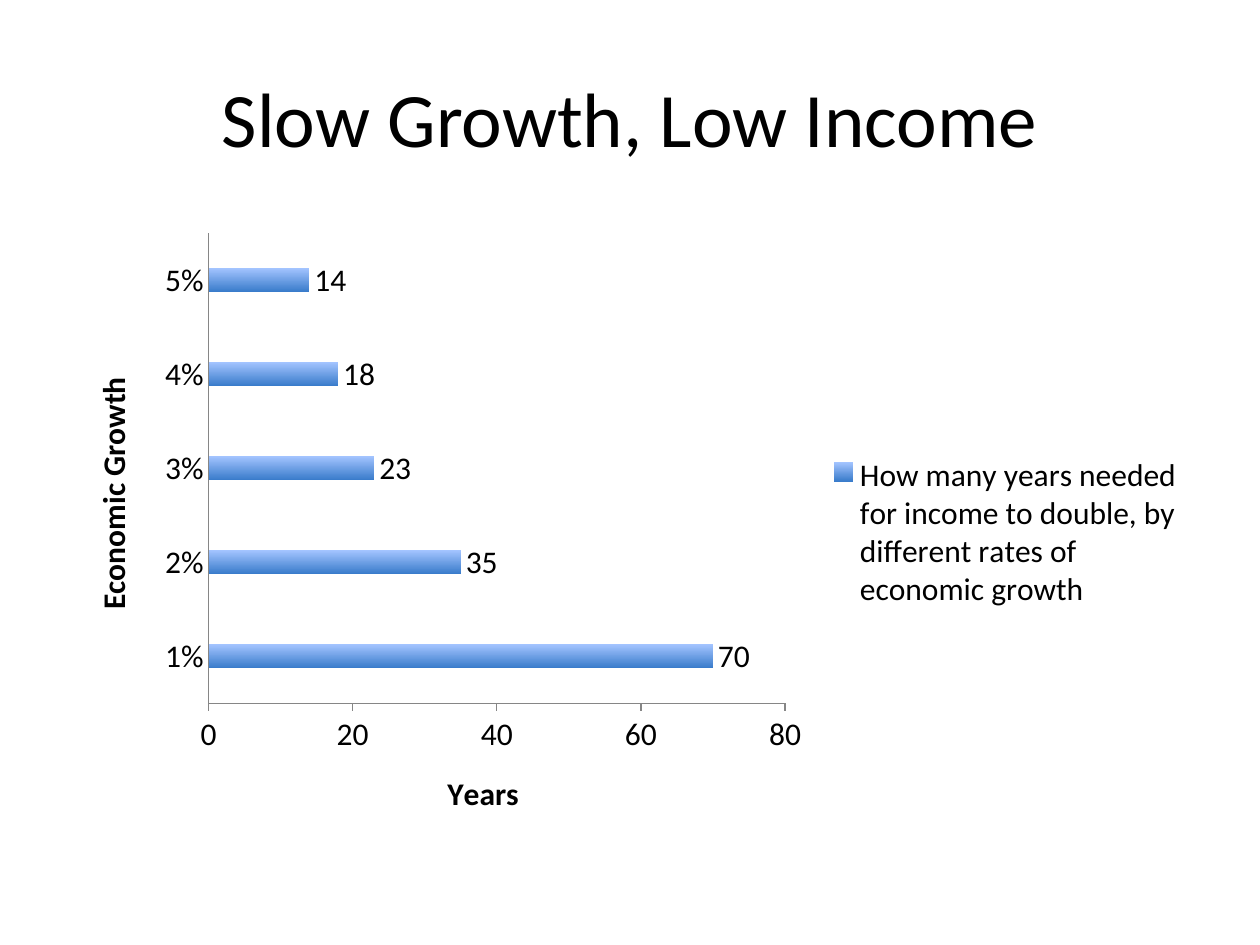
from dataclasses import dataclass

from pptx import Presentation
from pptx.chart.data import CategoryChartData
from pptx.dml.color import RGBColor
from pptx.enum.chart import XL_CHART_TYPE, XL_LABEL_POSITION, XL_LEGEND_POSITION, XL_TICK_MARK
from pptx.enum.text import MSO_ANCHOR, PP_ALIGN
from pptx.util import Inches, Pt


@dataclass(frozen=True)
class Theme:
    """Colours and type sizes of the slide."""

    font: str = "Calibri"
    text: RGBColor = RGBColor(0x00, 0x00, 0x00)
    axis: RGBColor = RGBColor(0x86, 0x86, 0x86)
    bar_top: RGBColor = RGBColor(0xA3, 0xC4, 0xFF)
    bar_bottom: RGBColor = RGBColor(0x3A, 0x7C, 0xCB)
    title_size: Pt = Pt(44)
    chart_size: Pt = Pt(18)


THEME = Theme()
WIDTH, HEIGHT = Inches(10), Inches(7.5)
MARGIN = 0.05
YEARS_TO_DOUBLE = {0.01: 70, 0.02: 35, 0.03: 23, 0.04: 18, 0.05: 14}
MEASURE = "How many years needed for income to double, by different rates of economic growth"


def band(top, height):
    """Return the box between the side margins, from shares of the slide height."""
    return (
        int(WIDTH * MARGIN),
        int(HEIGHT * top),
        int(WIDTH * (1 - 2 * MARGIN)),
        int(HEIGHT * height),
    )


def style_font(font, size, bold=False):
    """Apply the theme's typeface and text colour."""
    font.name, font.size, font.bold = THEME.font, size, bold
    font.color.rgb = THEME.text


def set_title(slide, text, box):
    """Place and format the slide title."""
    title = slide.shapes.title
    title.left, title.top, title.width, title.height = box
    title.text_frame.text = text
    title.text_frame.vertical_anchor = MSO_ANCHOR.MIDDLE
    heading = title.text_frame.paragraphs[0]
    heading.alignment = PP_ALIGN.CENTER
    style_font(heading.runs[0].font, THEME.title_size)


def style_axis(axis, caption, tick_mark, number_format):
    """Title an axis and format its line, ticks and labels."""
    axis.has_major_gridlines = False
    axis.major_tick_mark = tick_mark
    axis.minor_tick_mark = XL_TICK_MARK.NONE
    axis.format.line.color.rgb = THEME.axis
    axis.format.line.width = Pt(0.75)
    axis.tick_labels.number_format = number_format
    axis.tick_labels.number_format_is_linked = False
    axis.axis_title.text_frame.text = caption
    caption_run = axis.axis_title.text_frame.paragraphs[0].runs[0]
    style_font(caption_run.font, THEME.chart_size, bold=True)


def style_bars(plot):
    """Give the bars their gradient, spacing and value labels."""
    plot.gap_width = 300
    plot.vary_by_categories = False
    fill = plot.series[0].format.fill
    fill.gradient()
    fill.gradient_angle = 270
    for stop, color in zip(fill.gradient_stops, (THEME.bar_top, THEME.bar_bottom)):
        stop.color.rgb = color
    labels = plot.series[0].data_labels
    labels.show_value = True
    labels.number_format = "General"
    labels.number_format_is_linked = False
    labels.position = XL_LABEL_POSITION.OUTSIDE_END
    style_font(labels.font, THEME.chart_size)


def add_growth_chart(slide, box):
    """Add the bar chart of doubling times."""
    growth = CategoryChartData(number_format="General")
    growth.categories = YEARS_TO_DOUBLE.keys()
    growth.categories.number_format = "0%"
    growth.add_series(MEASURE, YEARS_TO_DOUBLE.values())
    chart = slide.shapes.add_chart(XL_CHART_TYPE.BAR_CLUSTERED, *box, growth).chart
    style_font(chart.font, THEME.chart_size)
    chart.has_title = False
    chart.has_legend = True
    chart.legend.position = XL_LEGEND_POSITION.RIGHT
    chart.legend.include_in_layout = False
    style_axis(chart.category_axis, "Economic Growth", XL_TICK_MARK.NONE, "0%")
    style_axis(chart.value_axis, "Years", XL_TICK_MARK.OUTSIDE, "General")
    chart.value_axis.minimum_scale = 0
    chart.value_axis.maximum_scale = 80
    chart.value_axis.major_unit = 20
    style_bars(chart.plots[0])


def main():
    """Build and save the slide."""
    deck = Presentation()
    deck.slide_width, deck.slide_height = WIDTH, HEIGHT
    slide = deck.slides.add_slide(deck.slide_layouts[5])
    set_title(slide, "Slow Growth, Low Income", band(0.04, 1 / 6))
    add_growth_chart(slide, band(7 / 30, 0.66))
    deck.save("out.pptx")


if __name__ == "__main__":
    main()
